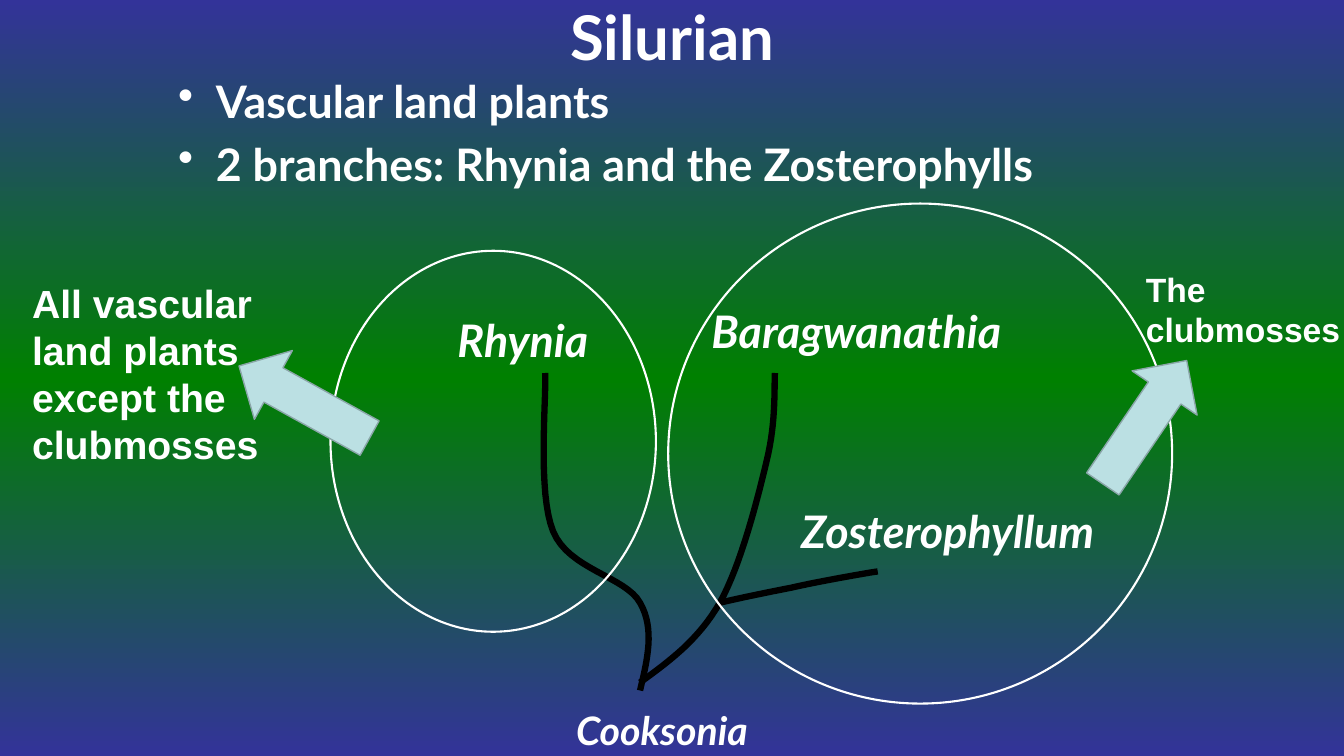
"""Build the Silurian slide: the two branches of early vascular land plants."""
from copy import deepcopy

from pptx import Presentation
from pptx.dml.color import RGBColor
from pptx.enum.shapes import MSO_SHAPE as Preset
from pptx.enum.text import MSO_ANCHOR as Anchor, PP_ALIGN as Align
from pptx.oxml.ns import qn
from pptx.oxml.xmlchemy import OxmlElement
from pptx.util import Cm, Pt

WHITE = RGBColor(0xFF, 0xFF, 0xFF)
BLACK = RGBColor(0x00, 0x00, 0x00)
INDIGO = RGBColor(0x33, 0x33, 0x99)
GREEN = RGBColor(0x00, 0x80, 0x00)
PALE_BLUE = RGBColor(0xBB, 0xE0, 0xE3)
GREY_BLUE = RGBColor(0x8A, 0xA6, 0xA8)
CURVE_STEPS = 16

deck = Presentation()
deck.slide_width, deck.slide_height = Cm(33.87), Cm(19.05)
page = deck.slides.add_slide(deck.slide_layouts[6])


def add_text(lines, left, top, width, height, size=32, font="Lato", italic=False,
             align=Align.LEFT, anchor=Anchor.TOP, wrap=True, bullets=False):
    box = page.shapes.add_textbox(Cm(left), Cm(top), Cm(width), Cm(height))
    frame = box.text_frame
    frame.word_wrap = wrap
    frame.vertical_anchor = anchor
    frame.text = "\n".join(lines)
    for para in frame.paragraphs:
        para.alignment = align
        span = para.runs[0].font
        span.name, span.size = font, Pt(size)
        span.bold, span.italic = True, italic
        span.color.rgb = WHITE
        if bullets:
            para.space_before = Pt(size * 0.2)
            properties = para._p.get_or_add_pPr()
            properties.set("marL", str(Cm(0.95)))
            properties.set("indent", str(-Cm(0.95)))
            bullet = OxmlElement("a:buChar")
            bullet.set("char", "•")
            properties.append(bullet)


def curve_points(start, segments):
    points = [start]
    for first, second, end in segments:
        origin = points[-1]
        for step in range(1, CURVE_STEPS + 1):
            t = step / CURVE_STEPS
            u = 1 - t
            points.append(tuple(
                u**3 * a + 3 * u * u * t * b + 3 * u * t * t * c + t**3 * d
                for a, b, c, d in zip(origin, first, second, end)))
    return [(Cm(x), Cm(y)) for x, y in points]


backdrop = page.background.fill
backdrop.gradient()
backdrop.gradient_angle = 90
stop_list = next(page._element.iter(qn("a:gsLst")))
stop_list.append(deepcopy(stop_list[0]))
for stop, position, color in zip(backdrop.gradient_stops, (0, 0.5, 1), (INDIGO, GREEN, INDIGO)):
    stop.position = position
    stop.color.rgb = color

branches = [
    ((16.13, 17.4), [((16.31, 16.64), (16.51, 15.85), (16.13, 15.19)),
                     ((15.77, 14.53), (14.33, 14.35), (13.94, 13.39)),
                     ((13.54, 12.42), (13.77, 10.06), (13.74, 9.4))]),
    ((16.13, 17.2), [((16.87, 16.66), (17.6, 16.13), (18.14, 15.19)),
                     ((18.67, 14.25), (19.1, 12.55), (19.33, 11.58)),
                     ((19.56, 10.62), (19.51, 9.75), (19.53, 9.4))]),
    ((18.14, 15.19), [((18.69, 15.06), (19.28, 14.94), (19.94, 14.81)),
                      ((20.6, 14.66), (21.77, 14.45), (22.12, 14.4))]),
]
for start, segments in branches:
    points = curve_points(start, segments)
    builder = page.shapes.build_freeform(*points[0])
    builder.add_line_segments(points[1:], close=False)
    branch = builder.convert_to_shape()
    branch.shadow.inherit = False
    branch.fill.background()
    branch.line.color.rgb = BLACK
    branch.line.width = Pt(4.5)

for left, top, width, height in [(8.33, 6.32, 8.2, 9.6), (16.84, 5.13, 12.7, 12.6)]:
    circle = page.shapes.add_shape(Preset.OVAL, Cm(left), Cm(top), Cm(width), Cm(height))
    circle.shadow.inherit = False
    circle.fill.background()
    circle.line.color.rgb = WHITE
    circle.line.width = Pt(1.5)

for left, top, angle in [(5.79, 9.14, 208.9), (26.97, 9.65, 304.2)]:
    arrow = page.shapes.add_shape(Preset.RIGHT_ARROW, Cm(left), Cm(top), Cm(3.76), Cm(1.98))
    arrow.rotation = angle
    arrow.shadow.inherit = False
    arrow.fill.solid()
    arrow.fill.fore_color.rgb = PALE_BLUE
    arrow.line.color.rgb = GREY_BLUE
    arrow.line.width = Pt(1)

add_text(["Silurian"], 5.51, -0.69, 22.86, 3.18, size=44, align=Align.CENTER, anchor=Anchor.MIDDLE)
add_text(["Vascular land plants", "2 branches: Rhynia and the Zosterophylls"],
         4.24, 1.73, 25.04, 12.57, bullets=True)
add_text(["Cooksonia"], 14.27, 17.68, 5.61, 1.45, size=28, italic=True)
add_text(["Rhynia"], 11.28, 7.75, 4.45, 1.6, italic=True)
add_text(["Zosterophyllum"], 19.94, 12.57, 9.37, 1.6, italic=True)
add_text(["Baragwanathia"], 17.68, 7.54, 9.12, 1.6, italic=True)
add_text(["All vascular land plants except the clubmosses"],
         0.56, 6.91, 6.3, 5.05, size=28, font="Arial")
add_text(["The", "clubmosses"], 28.63, 6.65, 5.46, 2.31, size=24, font="Arial", wrap=False)

deck.save("out.pptx")
